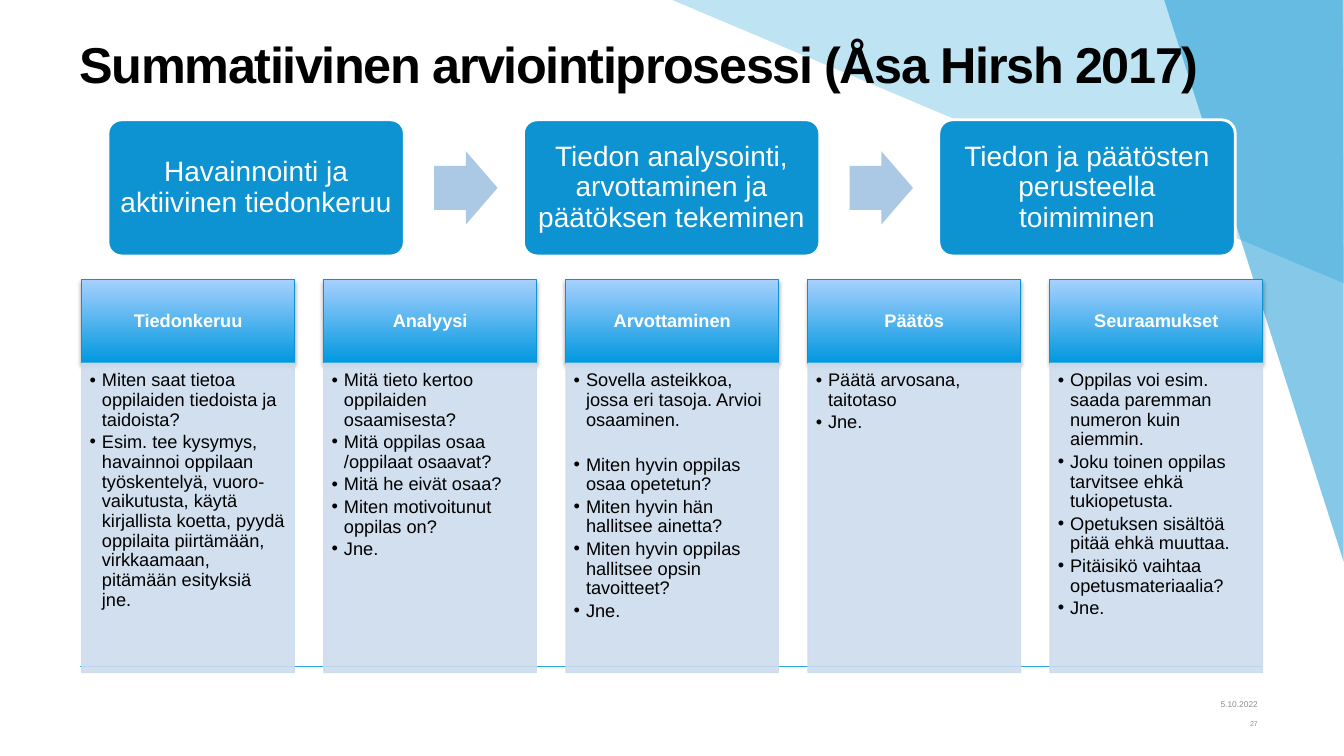
"""Build the slide on the summative assessment process."""
from lxml import etree
from pptx import Presentation, util as u
from pptx.dml.color import RGBColor
from pptx.enum import shapes, text
from pptx.oxml.ns import qn

TITLE = "Summatiivinen arviointiprosessi (Åsa Hirsh 2017)"
STEPS = [
    "Havainnointi ja aktiivinen tiedonkeruu",
    "Tiedon analysointi, arvottaminen ja päätöksen tekeminen",
    "Tiedon ja päätösten perusteella toimiminen",
]
COLUMNS = {
    "Tiedonkeruu": [
        "Miten saat tietoa oppilaiden tiedoista ja taidoista?",
        "Esim. tee kysymys, havainnoi oppilaan työskentelyä, vuoro-vaikutusta, "
        "käytä kirjallista koetta, pyydä oppilaita piirtämään, virkkaamaan, "
        "pitämään esityksiä jne.",
    ],
    "Analyysi": [
        "Mitä tieto kertoo oppilaiden osaamisesta?",
        "Mitä oppilas osaa /oppilaat osaavat?",
        "Mitä he eivät osaa?",
        "Miten motivoitunut oppilas on?",
        "Jne.",
    ],
    "Arvottaminen": [
        "Sovella asteikkoa, jossa eri tasoja. Arvioi osaaminen.",
        "Miten hyvin oppilas osaa opetetun?",
        "Miten hyvin hän hallitsee ainetta?",
        "Miten hyvin oppilas hallitsee opsin tavoitteet?",
        "Jne.",
    ],
    "Päätös": ["Päätä arvosana, taitotaso", "Jne."],
    "Seuraamukset": [
        "Oppilas voi esim. saada paremman numeron kuin aiemmin.",
        "Joku toinen oppilas tarvitsee ehkä tukiopetusta.",
        "Opetuksen sisältöä pitää ehkä muuttaa.",
        "Pitäisikö vaihtaa opetusmateriaalia?",
        "Jne.",
    ],
}
GAP_BEFORE = {"Miten hyvin oppilas osaa opetetun?": 16}
TRIANGLES = [
    ([(16.94, 0), (33.87, 7.14), (33.83, 0)], "28A7DA", 30),
    ([(29.34, 0), (33.86, 14.15), (33.86, 0)], "0D93D2", 50),
]
FOOTERS = [("5.10.2022", 17.5, 0.51, 6), ("27", 18.01, 0.46, 5)]

STEP_LEFT, STEP_TOP, STEP_WIDTH, STEP_HEIGHT, STEP_PITCH = 2.72, 3.02, 7.47, 3.43, 10.47
ARROW_LEFT, ARROW_TOP, ARROW_WIDTH, ARROW_HEIGHT = 10.94, 3.81, 1.6, 1.85
COLUMN_LEFT, COLUMN_WIDTH, COLUMN_PITCH = 2.06, 5.36, 6.1
HEAD_TOP, HEAD_HEIGHT, BODY_HEIGHT = 7.04, 2.11, 7.8

deck = Presentation()
deck.slide_width, deck.slide_height = u.Cm(33.87), u.Cm(19.05)
page = deck.slides.add_slide(deck.slide_layouts[6])


def color(value):
    return RGBColor.from_string(value)


def element(parent, tag, **attributes):
    return etree.SubElement(parent, qn(tag), attributes)


def paint(shape, fill, line=None, width=0.75, opacity=100):
    shape.shadow.inherit = False
    shape.fill.solid()
    shape.fill.fore_color.rgb = color(fill)
    if line:
        shape.line.color.rgb = color(line)
        shape.line.width = u.Pt(width)
    else:
        shape.line.fill.background()
    if opacity < 100:
        for shade in shape._element.spPr.iter(qn("a:srgbClr")):
            element(shade, "a:alpha", val=str(opacity * 1000))


def paint_header(shape):
    paint(shape, "0098DF", "0D93D2")
    shape.fill.gradient()
    shape.fill.gradient_angle = 90
    for stop, shade in zip(shape.fill.gradient_stops, ("0098DF", "A8D1FF")):
        stop.color.rgb = color(shade)
    effects = shape._element.spPr.find(qn("a:effectLst"))
    shadow = element(effects, "a:outerShdw", blurRad=str(u.Pt(3.1)), dist=str(u.Pt(1.8)),
                     dir="5400000", rotWithShape="0")
    element(element(shadow, "a:srgbClr", val="000000"), "a:alpha", val="35000")


def add_preset(kind, left, top, width, height):
    return page.shapes.add_shape(kind, *map(u.Cm, (left, top, width, height)))


def write(shape, lines, size, shade="FFFFFF", bold=False, align="CENTER", anchor="MIDDLE",
          insets=(0.2, 0.2, 0.2, 0.2), spacing=0.9, after=0, tracking=0, bullet=False):
    frame = shape.text_frame
    frame.word_wrap = True
    frame.vertical_anchor = text.MSO_ANCHOR[anchor]
    (frame.margin_left, frame.margin_top,
     frame.margin_right, frame.margin_bottom) = map(u.Cm, insets)
    for number, line in enumerate(lines):
        para = frame.add_paragraph() if number else frame.paragraphs[0]
        para.alignment = text.PP_ALIGN[align]
        para.line_spacing = spacing
        para.space_after = u.Pt(after)
        if line in GAP_BEFORE:
            para.space_before = u.Pt(GAP_BEFORE[line])
        if bullet:
            properties = para._p.get_or_add_pPr()
            properties.set("marL", str(u.Cm(0.31)))
            properties.set("indent", str(-u.Cm(0.31)))
            element(properties, "a:buFont", typeface="Arial")
            element(properties, "a:buChar", char="•")
        span = para.add_run()
        span.text = line
        span.font.name, span.font.size, span.font.bold = "Arial", u.Pt(size), bold
        span.font.color.rgb = color(shade)
        if tracking:
            span._r.get_or_add_rPr().set("spc", str(tracking * 100))


def add_text(left, top, width, height, lines, size, **style):
    box = page.shapes.add_textbox(*map(u.Cm, (left, top, width, height)))
    write(box, lines, size, **style)


def add_background():
    rule = page.shapes.add_connector(shapes.MSO_CONNECTOR.STRAIGHT,
                                     *map(u.Cm, (2.01, 16.79, 31.8, 16.79)))
    rule.line.color.rgb = color("28A7DA")
    rule.line.width = u.Pt(1)
    element(rule._element.spPr, "a:effectLst")
    for corners, shade, opacity in TRIANGLES:
        points = [(u.Cm(x), u.Cm(y)) for x, y in corners]
        outline = page.shapes.build_freeform(*points[0])
        outline.add_line_segments(points[1:], close=True)
        paint(outline.convert_to_shape(), shade, opacity=opacity)


def add_columns():
    for number, (heading, points) in enumerate(COLUMNS.items()):
        left = COLUMN_LEFT + number * COLUMN_PITCH
        header = add_preset(shapes.MSO_SHAPE.RECTANGLE, left, HEAD_TOP, COLUMN_WIDTH, HEAD_HEIGHT)
        paint_header(header)
        write(header, [heading], 13, bold=True)
        body = add_preset(shapes.MSO_SHAPE.RECTANGLE, left, HEAD_TOP + HEAD_HEIGHT,
                          COLUMN_WIDTH, BODY_HEIGHT)
        paint(body, "CCDCEE", "CCDCEE", opacity=90)
        write(body, points, 13, shade="000000", align="LEFT", anchor="TOP",
              insets=(0.2, 0.2, 0.25, 0.28), after=2, bullet=True)


def add_steps():
    for number, step in enumerate(STEPS):
        offset = number * STEP_PITCH
        box = add_preset(shapes.MSO_SHAPE.ROUNDED_RECTANGLE, STEP_LEFT + offset, STEP_TOP,
                         STEP_WIDTH, STEP_HEIGHT)
        box.adjustments[0] = 0.1
        paint(box, "0D93D2", "FFFFFF", width=2)
        write(box, [step], 20)
        if number < len(STEPS) - 1:
            arrow = add_preset(shapes.MSO_SHAPE.RIGHT_ARROW, ARROW_LEFT + offset, ARROW_TOP,
                               ARROW_WIDTH, ARROW_HEIGHT)
            arrow.adjustments[0], arrow.adjustments[1] = 0.6, 0.5
            paint(arrow, "ABC8E5")


add_background()
add_text(2.01, 1.07, 29.79, 2.9, [TITLE], 36, shade="000000", bold=True, align="LEFT",
         anchor="TOP", insets=(0, 0, 0, 0), spacing=0.85, tracking=-1)
for label, top, height, size in FOOTERS:
    add_text(18.29, top, 13.41, height, [label], size, shade="8C8C8C", align="RIGHT",
             insets=(0.25, 0.13, 0, 0.13))
add_columns()
add_steps()
deck.save("out.pptx")
